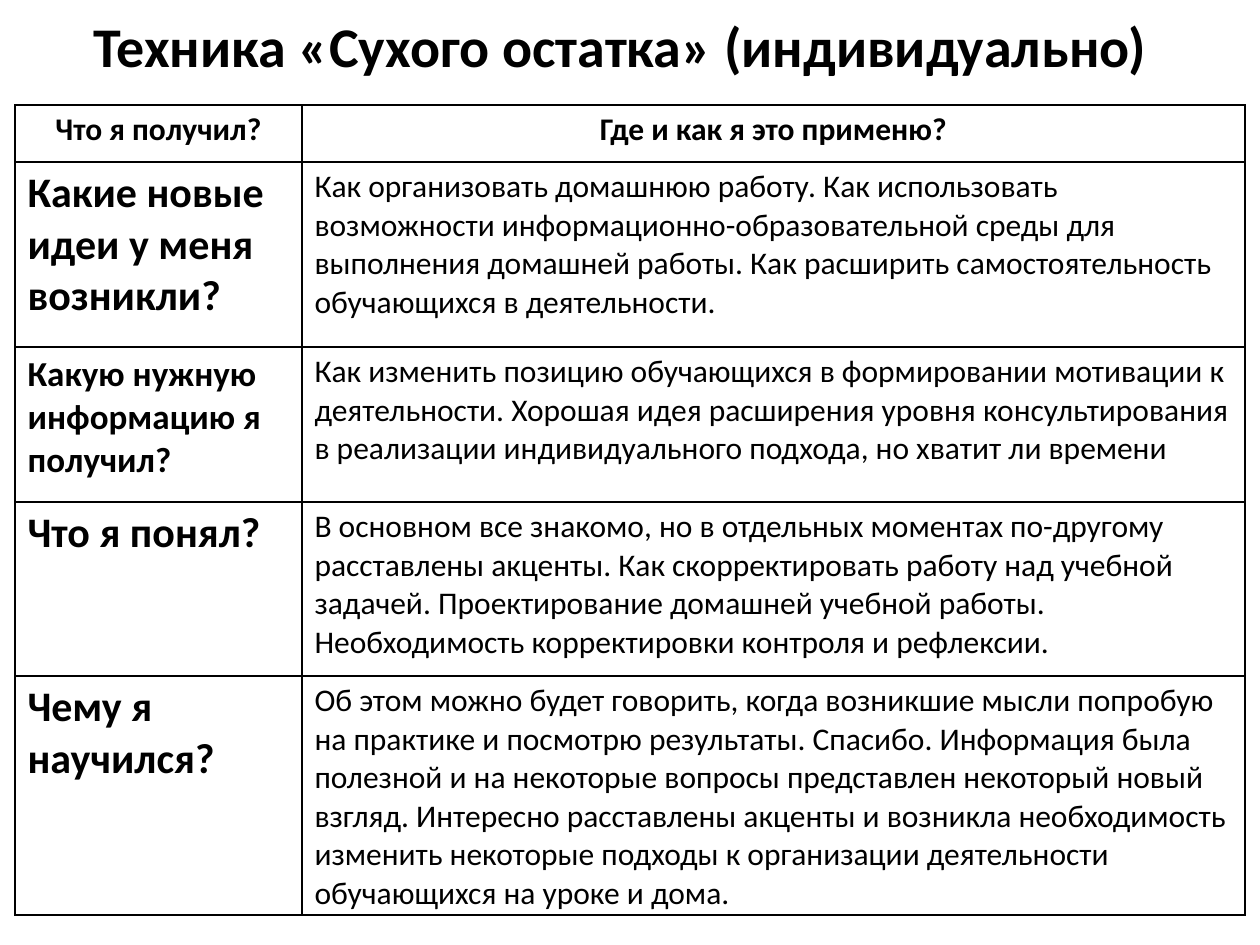
from lxml.etree import SubElement
from pptx import Presentation
from pptx.dml.color import RGBColor
from pptx.enum.text import MSO_ANCHOR, PP_ALIGN
from pptx.oxml.ns import qn
from pptx.util import Pt

PX = 914400 // 126
BLACK = RGBColor(0, 0, 0)
WHITE = RGBColor(255, 255, 255)


def write(frame, text, size=18, bold=False, align=PP_ALIGN.LEFT):
    frame.word_wrap = True
    para = frame.paragraphs[0]
    para.alignment = align
    span = para.add_run()
    span.text = text
    span.font.name = "Calibri"
    span.font.size = Pt(size)
    span.font.bold = bold
    span.font.color.rgb = BLACK


def add_borders(cell):
    properties = cell._tc.get_or_add_tcPr()
    for position, side in enumerate(("lnL", "lnR", "lnT", "lnB")):
        line = properties.makeelement(qn(f"a:{side}"), {"w": str(Pt(1))})
        fill = SubElement(line, qn("a:solidFill"))
        SubElement(fill, qn("a:srgbClr"), val=str(BLACK))
        properties.insert(position, line)


deck = Presentation()
deck.slide_width = 1260 * PX
deck.slide_height = 945 * PX
page = deck.slides.add_slide(deck.slide_layouts[6])

# Title
title = page.shapes.add_textbox(35 * PX, 5 * PX, 1171 * PX, 81 * PX)
write(title.text_frame, "Техника «Сухого остатка» (индивидуально)",
      size=32, bold=True, align=PP_ALIGN.CENTER)

# Reflection table: row height, question, question size, answer
column_widths = [287, 943]
rows = [
    (57, "Что я получил?", 18, "Где и как я это применю?"),
    (185, "Какие новые идеи у меня возникли?", 24,
     "Как организовать домашнюю работу. Как использовать возможности "
     "информационно-образовательной среды для выполнения домашней работы. "
     "Как расширить самостоятельность обучающихся в деятельности."),
    (155, "Какую нужную информацию я получил?", 20,
     "Как изменить позицию обучающихся в формировании мотивации к "
     "деятельности. Хорошая идея расширения уровня консультирования в "
     "реализации индивидуального подхода, но хватит ли времени"),
    (174, "Что я понял?", 24,
     "В основном все знакомо, но в отдельных моментах по-другому "
     "расставлены акценты. Как скорректировать работу над учебной задачей. "
     "Проектирование домашней учебной работы. Необходимость корректировки "
     "контроля и рефлексии."),
    (239, "Чему я научился?", 24,
     "Об этом можно будет говорить, когда возникшие мысли попробую на "
     "практике и посмотрю результаты. Спасибо. Информация была полезной и "
     "на некоторые вопросы представлен некоторый новый взгляд. Интересно "
     "расставлены акценты и возникла необходимость изменить некоторые "
     "подходы к организации деятельности обучающихся на уроке и дома."),
]
table = page.shapes.add_table(
    len(rows), len(column_widths), 15 * PX, 105 * PX,
    sum(column_widths) * PX, sum(row[0] for row in rows) * PX).table
for column, width in zip(table.columns, column_widths):
    column.width = width * PX

for index, (height, question, question_size, answer) in enumerate(rows):
    table.rows[index].height = height * PX
    header = index == 0
    align = PP_ALIGN.CENTER if header else PP_ALIGN.LEFT
    question_cell, answer_cell = table.rows[index].cells
    write(question_cell.text_frame, question, size=question_size,
          bold=True, align=align)
    write(answer_cell.text_frame, answer, bold=header, align=align)
    for cell in (question_cell, answer_cell):
        cell.vertical_anchor = MSO_ANCHOR.TOP
        cell.margin_top = 6 * PX
        cell.margin_bottom = 2 * PX
        cell.fill.solid()
        cell.fill.fore_color.rgb = WHITE
        add_borders(cell)

deck.save("out.pptx")
